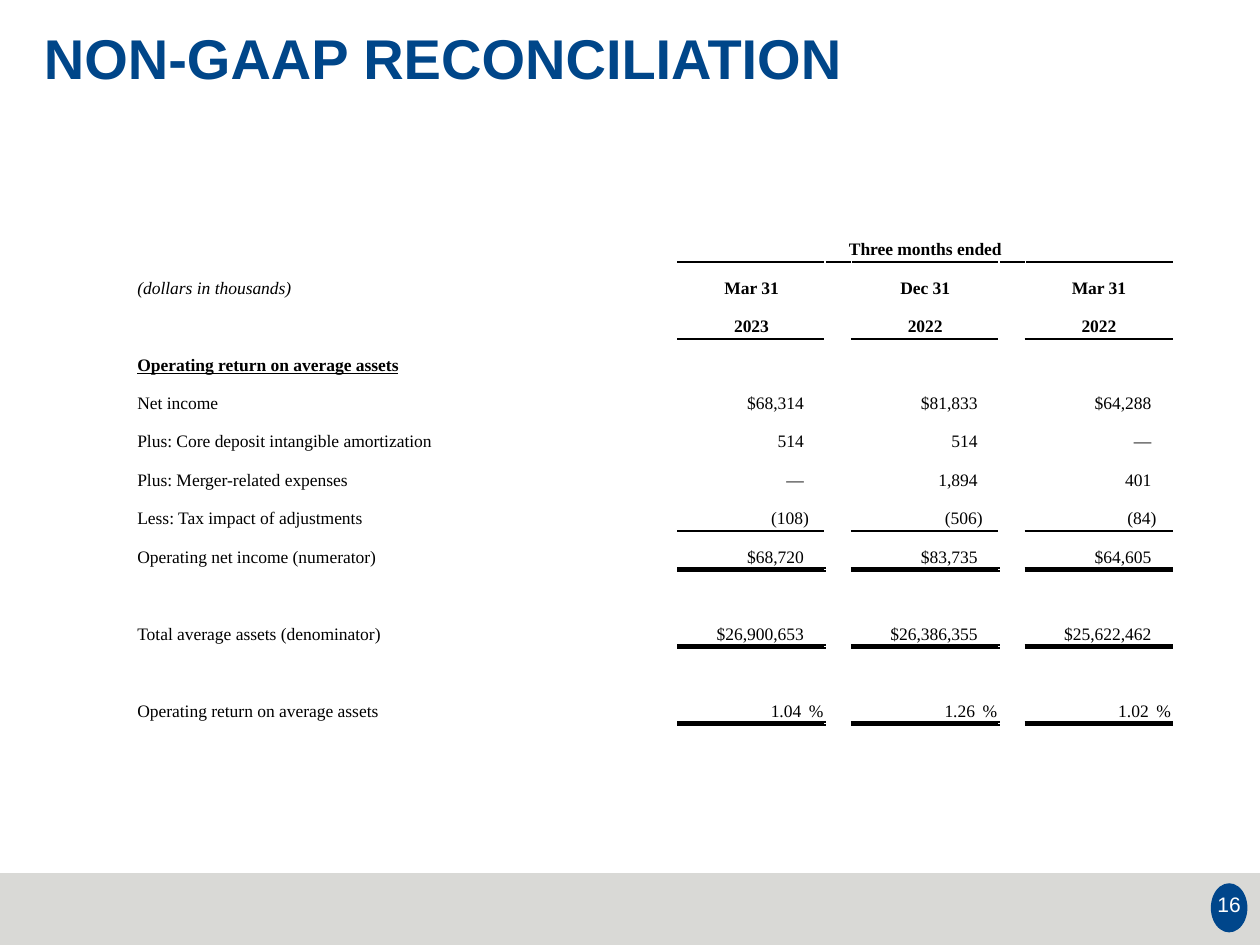
from dataclasses import dataclass

from lxml import etree
from pptx import Presentation
from pptx import util as u
from pptx.dml.color import RGBColor
from pptx.enum import shapes, text
from pptx.oxml import ns


@dataclass(frozen=True)
class Theme:
    """Colours, fonts and type sizes of the deck."""
    title: str = "004689"
    badge: str = "00468B"
    band: str = "D9D9D6"
    paper: str = "FFFFFF"
    ink: str = "000000"
    sans: str = "Arial"
    serif: str = "Times New Roman"
    title_size: int = 32
    page_size: int = 12
    table_size: int = 10


T = Theme()
LEFT, CENTER, RIGHT = text.PP_ALIGN.LEFT, text.PP_ALIGN.CENTER, text.PP_ALIGN.RIGHT
COLUMNS = [4.32, 1.17, 0.09, 1.17, 0.09, 1.17]
VALUE_COLUMNS = (1, 3, 5)
HEADER_ROWS = 3
ROWS = [
    ("", "Three months ended"),
    ("(dollars in thousands)", "Mar 31", "Dec 31", "Mar 31"),
    ("", "2023", "2022", "2022"),
    ("Operating return on average assets",),
    ("Net income", "$68,314", "$81,833", "$64,288"),
    ("Plus: Core deposit intangible amortization", "514", "514", "—"),
    ("Plus: Merger-related expenses", "—", "1,894", "401"),
    ("Less: Tax impact of adjustments", "(108)", "(506)", "(84)"),
    ("Operating net income (numerator)", "$68,720", "$83,735", "$64,605"),
    (),
    ("Total average assets (denominator)", "$26,900,653", "$26,386,355", "$25,622,462"),
    (),
    ("Operating return on average assets", "1.04\t%", "1.26\t%", "1.02\t%"),
    (),
]
LABEL_STYLES = {1: {"italic": True}, 3: {"bold": True, "underline": True}}
RULES = {0: 1, 2: 1, 7: 1, 8: 3, 10: 3, 12: 3}


def assign(obj, values):
    """Set each attribute of obj from a dict."""
    for name, value in values.items():
        setattr(obj, name, value)


def write(p, words, color, **font):
    """Add one formatted run to a paragraph."""
    r = p.add_run()
    r.text = words
    font["size"] = u.Pt(font["size"])
    assign(r.font, font)
    r.font.color.rgb = RGBColor.from_string(color)


def add_text(s, box, words, color, align=LEFT, spacing=1.0,
             anchor=text.MSO_ANCHOR.TOP, **font):
    """Place a text box holding one paragraph."""
    tf = s.shapes.add_textbox(*map(u.Inches, box)).text_frame
    assign(tf, {"word_wrap": True, "vertical_anchor": anchor,
                "margin_left": u.Inches(0.1), "margin_right": u.Inches(0.1),
                "margin_top": u.Inches(0.06), "margin_bottom": u.Inches(0.1)})
    p = tf.paragraphs[0]
    assign(p, {"alignment": align, "line_spacing": spacing})
    write(p, words, color, **font)


def add_solid(s, kind, box, color):
    """Place a plain filled shape without outline."""
    sp = s.shapes.add_shape(kind, *map(u.Inches, box))
    sp.shadow.inherit = False
    sp.fill.solid()
    sp.fill.fore_color.rgb = RGBColor.from_string(color)
    sp.line.fill.background()


def add_footer(s, box, page):
    """Draw the footer band with its page badge."""
    left, top, width, height = box
    right = left + width
    add_solid(s, shapes.MSO_SHAPE.RECTANGLE, box, T.band)
    add_solid(s, shapes.MSO_SHAPE.OVAL, (right - 0.39, top + 0.08, 0.29, 0.39), T.badge)
    add_text(s, (right - 0.48, top + 0.07, 0.47, 0.39), page, T.paper, CENTER,
             anchor=text.MSO_ANCHOR.MIDDLE, name=T.sans, size=T.page_size)


def rule_below(row, col):
    """Return colour and points of the line under a cell."""
    ruled = row in RULES and (col in VALUE_COLUMNS or (row == 0 and col > 0))
    return (T.ink, RULES[row]) if ruled else (T.paper, 1)


def set_borders(cell, row, col):
    """Draw the four edges of a cell."""
    edges = {"L": (T.paper, 1), "R": (T.paper, 1),
             "T": rule_below(row - 1, col), "B": rule_below(row, col)}
    tc_pr = cell._tc.get_or_add_tcPr()
    for side, (color, points) in edges.items():
        ln = etree.SubElement(tc_pr, ns.qn(f"a:ln{side}"), w=str(u.Pt(points)))
        fill = etree.SubElement(ln, ns.qn("a:solidFill"))
        etree.SubElement(fill, ns.qn("a:srgbClr"), val=color)


def add_tabs(p, stops):
    """Give a paragraph its tab stops."""
    tabs = etree.SubElement(p._p.get_or_add_pPr(), ns.qn("a:tabLst"))
    for pos, align in stops:
        etree.SubElement(tabs, ns.qn("a:tab"), pos=str(u.Inches(pos)), algn=align)


def fill_cell(cell, words, row, col):
    """Write and align one table cell."""
    p = cell.text_frame.paragraphs[0]
    p.line_spacing = 1.0
    style, inset = {}, 0.03
    if col == 0:
        style = LABEL_STYLES.get(row, {})
    elif row < HEADER_ROWS:
        p.alignment, style = CENTER, {"bold": True}
    elif words.endswith("%"):
        inset = 0
        add_tabs(p, [(0.98, "r"), (1.04, "l")])
        words = "\t" + words
    else:
        p.alignment = RIGHT
        inset = 0.13 if words.endswith(")") else 0.17
    assign(cell, {"vertical_anchor": text.MSO_ANCHOR.BOTTOM,
                  "margin_left": u.Inches(0.03 if inset == 0.03 else 0),
                  "margin_right": u.Inches(inset),
                  "margin_top": 0, "margin_bottom": u.Inches(0.02)})
    if words:
        write(p, words, T.ink, name=T.serif, size=T.table_size, **style)
    else:
        p._p.get_or_add_endParaRPr().set("sz", str(T.table_size * 100))


def add_reconciliation(s, box, header_height=0.22):
    """Build the reconciliation table."""
    table = s.shapes.add_table(len(ROWS), len(COLUMNS), *map(u.Inches, box)).table
    assign(table, {"first_row": False, "horz_banding": False})
    for column, width in zip(table.columns, COLUMNS):
        column.width = u.Inches(width)
    body_height = (box[3] - header_height) / (len(ROWS) - 1)
    for i, values in enumerate(ROWS):
        table.rows[i].height = u.Inches(body_height if i else header_height)
        words = dict(zip((0, *VALUE_COLUMNS), values))
        for j in range(len(COLUMNS)):
            cell = table.cell(i, j)
            set_borders(cell, i, j)
            cell.fill.background()
            fill_cell(cell, words.get(j, ""), i, j)
    table.cell(0, 1).merge(table.cell(0, len(COLUMNS) - 1))


def main():
    """Build and save the slide."""
    prs = Presentation()
    assign(prs, {"slide_width": u.Inches(10), "slide_height": u.Inches(7.5)})
    s = prs.slides.add_slide(prs.slide_layouts[6])
    add_footer(s, (0, 6.93, 10, 0.57), "16")
    add_text(s, (0.25, 0.19, 9.67, 1.14), "NON-GAAP RECONCILIATION", T.title,
             spacing=0.9, name=T.sans, size=T.title_size, bold=True)
    add_reconciliation(s, (1.06, 1.86, 8, 4.19))
    prs.save("out.pptx")


if __name__ == "__main__":
    main()
